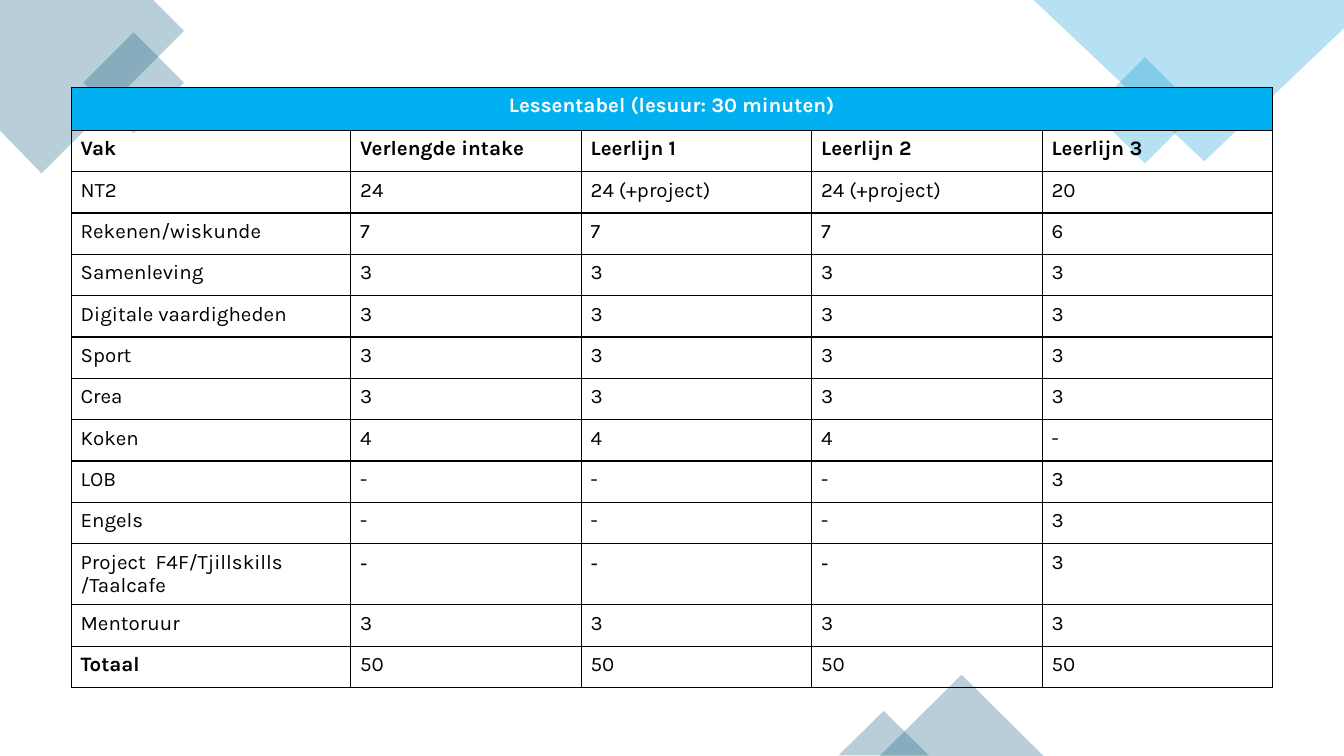
import math
from dataclasses import dataclass

from lxml import etree
from pptx import Presentation
from pptx import util as u
from pptx.dml.color import RGBColor
from pptx.enum import shapes, text
from pptx.oxml import ns


@dataclass(frozen=True)
class Theme:
    teal: str = "156082"
    sky: str = "0F9ED5"
    banner: str = "00B0F0"
    ink: str = "000000"
    paper: str = "FFFFFF"
    font: str = "Karla"
    dash_font: str = "DejaVu Sans"
    size: float = 11
    line_spacing: float = 12.8
    wide_spacing: float = 13.5
    border: float = 0.75
    opacity: int = 30


@dataclass(frozen=True)
class Preset:
    kind: shapes.MSO_SHAPE
    left: float
    top: float
    width: float
    height: float
    color: str
    rotation: float = 0


@dataclass(frozen=True)
class Outline:
    """Polygon as seen on the slide, turned about a given centre."""
    points: tuple
    center: tuple
    rotation: float
    color: str


THEME = Theme()
SQUARE, TRIANGLE = shapes.MSO_SHAPE.RECTANGLE, shapes.MSO_SHAPE.ISOSCELES_TRIANGLE

# Slide in 16:9
SLIDE_WIDTH = 10
SLIDE_HEIGHT = SLIDE_WIDTH * 9 / 16

DECORATIONS = (
    Outline(((1.14, 0), (0, 0), (0, 0.97), (0.31, 1.29), (1.37, 0.23)),
            (0.44, 0.36), 315, THEME.teal),
    Preset(SQUARE, 0.73, 0.35, 0.53, 0.53, THEME.teal, 315),
    Preset(SQUARE, 8.24, 0.54, 0.56, 0.56, THEME.sky, 315),
    Outline(((10, 0), (7.67, 0), (8.95, 1.21), (10, 0.21)),
            (8.84, 0.6), 180, THEME.sky),
    Preset(TRIANGLE, 6.54, 5.02, 1.23, 0.61, THEME.teal),
    Preset(TRIANGLE, 6.24, 5.29, 0.67, 0.33, THEME.teal),
)

TITLE = "Lessentabel (lesuur: 30 minuten)"
PROJECT = "Project  F4F/Tjillskills /Taalcafe"
TOTAL = "Totaal"
LESSONS = (
    ("Vak", "Verlengde intake", "Leerlijn 1", "Leerlijn 2", "Leerlijn 3"),
    ("NT2", "24", "24 (+project)", "24 (+project)", "20"),
    ("Rekenen/wiskunde", "7", "7", "7", "6"),
    *((subject, "3", "3", "3", "3")
      for subject in ("Samenleving", "Digitale vaardigheden", "Sport", "Crea")),
    ("Koken", "4", "4", "4", "-"),
    *((subject, "-", "-", "-", "3") for subject in ("LOB", "Engels", PROJECT)),
    ("Mentoruur", "3", "3", "3", "3"),
    (TOTAL, "50", "50", "50", "50"),
)

LEFT, TOP, WIDTH, HEIGHT = 0.53, 0.65, 8.94, 4.46
SUBJECT_WIDTH, TITLE_HEIGHT, PROJECT_HEIGHT = 2.08, 0.32, 0.45


def apply(target, values: dict) -> None:
    for name, value in values.items():
        setattr(target, name, value)


def paint(shape, color: str, rotation: float) -> None:
    """Give a decoration its translucent fill, without line or shadow."""
    shape.rotation = rotation
    shape.shadow.inherit = False
    shape.line.fill.background()
    shape.fill.solid()
    shape.fill.fore_color.rgb = RGBColor.from_string(color)
    fill_color = shape._element.spPr.find(".//" + ns.qn("a:srgbClr"))
    etree.SubElement(fill_color, ns.qn("a:alpha"), val=str(THEME.opacity * 1000))


def draw_preset(slide, item: Preset) -> None:
    box = map(u.Inches, (item.left, item.top, item.width, item.height))
    paint(slide.shapes.add_shape(item.kind, *box), item.color, item.rotation)


def draw_outline(slide, item: Outline) -> None:
    angle = math.radians(-item.rotation)
    center_x, center_y = item.center

    def unturned(point: tuple) -> tuple:
        dx, dy = point[0] - center_x, point[1] - center_y
        return (u.Inches(center_x + dx * math.cos(angle) - dy * math.sin(angle)),
                u.Inches(center_y + dx * math.sin(angle) + dy * math.cos(angle)))

    first, *rest = map(unturned, item.points)
    builder = slide.shapes.build_freeform(*first)
    builder.add_line_segments(rest, close=True)
    paint(builder.convert_to_shape(), item.color, item.rotation)


def add_borders(cell) -> None:
    properties = cell._tc.get_or_add_tcPr()
    for side in ("lnL", "lnR", "lnT", "lnB"):
        line = etree.SubElement(properties, ns.qn(f"a:{side}"), w=str(u.Pt(THEME.border)))
        fill = etree.SubElement(line, ns.qn("a:solidFill"))
        etree.SubElement(fill, ns.qn("a:srgbClr"), val=THEME.ink)


def write_cell(cell, content: str, bold: bool = False, color: str = THEME.ink,
               font: str = THEME.font, spacing: float = THEME.line_spacing,
               margin: float = 0.05, align=text.PP_ALIGN.LEFT) -> None:
    apply(cell, {"margin_left": u.Inches(0.07), "margin_right": u.Inches(0.07),
                 "margin_top": u.Inches(margin), "margin_bottom": u.Inches(margin),
                 "vertical_anchor": text.MSO_ANCHOR.TOP})
    paragraph = cell.text_frame.paragraphs[0]
    apply(paragraph, {"alignment": align, "line_spacing": u.Pt(spacing)})
    run = paragraph.add_run()
    run.text = content
    apply(run.font, {"name": font, "size": u.Pt(THEME.size), "bold": bold})
    run.font.color.rgb = RGBColor.from_string(color)


def draw_lesson_table(slide) -> None:
    row_count, column_count = len(LESSONS) + 1, len(LESSONS[0])
    box = map(u.Inches, (LEFT, TOP, WIDTH, HEIGHT))
    table = slide.shapes.add_table(row_count, column_count, *box).table
    apply(table, {"first_row": False, "horz_banding": False})

    # Grid: wide first column, tall project row, the rest equal
    for column in table.columns:
        column.width = u.Inches((WIDTH - SUBJECT_WIDTH) / (column_count - 1))
    table.columns[0].width = u.Inches(SUBJECT_WIDTH)
    plain_height = (HEIGHT - TITLE_HEIGHT - PROJECT_HEIGHT) / (row_count - 2)
    for row, lesson in zip(list(table.rows)[1:], LESSONS):
        row.height = u.Inches(PROJECT_HEIGHT if lesson[0] == PROJECT else plain_height)
    table.rows[0].height = u.Inches(TITLE_HEIGHT)
    for cell in table.iter_cells():
        add_borders(cell)
        cell.fill.background()

    # Title banner
    title = table.cell(0, 0)
    title.merge(table.cell(0, column_count - 1))
    title.fill.solid()
    title.fill.fore_color.rgb = RGBColor.from_string(THEME.banner)
    write_cell(title, TITLE, bold=True, color=THEME.paper, spacing=THEME.wide_spacing,
               margin=0.04, align=text.PP_ALIGN.CENTER)

    # Headings and lesson hours
    for row_index, lesson in enumerate(LESSONS, start=1):
        for column_index, content in enumerate(lesson):
            style = {"bold": row_index == 1 or content == TOTAL}
            if lesson[0] == PROJECT and content == "-":
                style.update(font=THEME.dash_font, spacing=THEME.wide_spacing)
            write_cell(table.cell(row_index, column_index), content, **style)


def main() -> None:
    presentation = Presentation()
    apply(presentation, {"slide_width": u.Inches(SLIDE_WIDTH),
                         "slide_height": u.Inches(SLIDE_HEIGHT)})
    slide = presentation.slides.add_slide(presentation.slide_layouts[6])
    for item in DECORATIONS:
        draw = draw_outline if isinstance(item, Outline) else draw_preset
        draw(slide, item)
    draw_lesson_table(slide)
    presentation.save("out.pptx")


if __name__ == "__main__":
    main()
